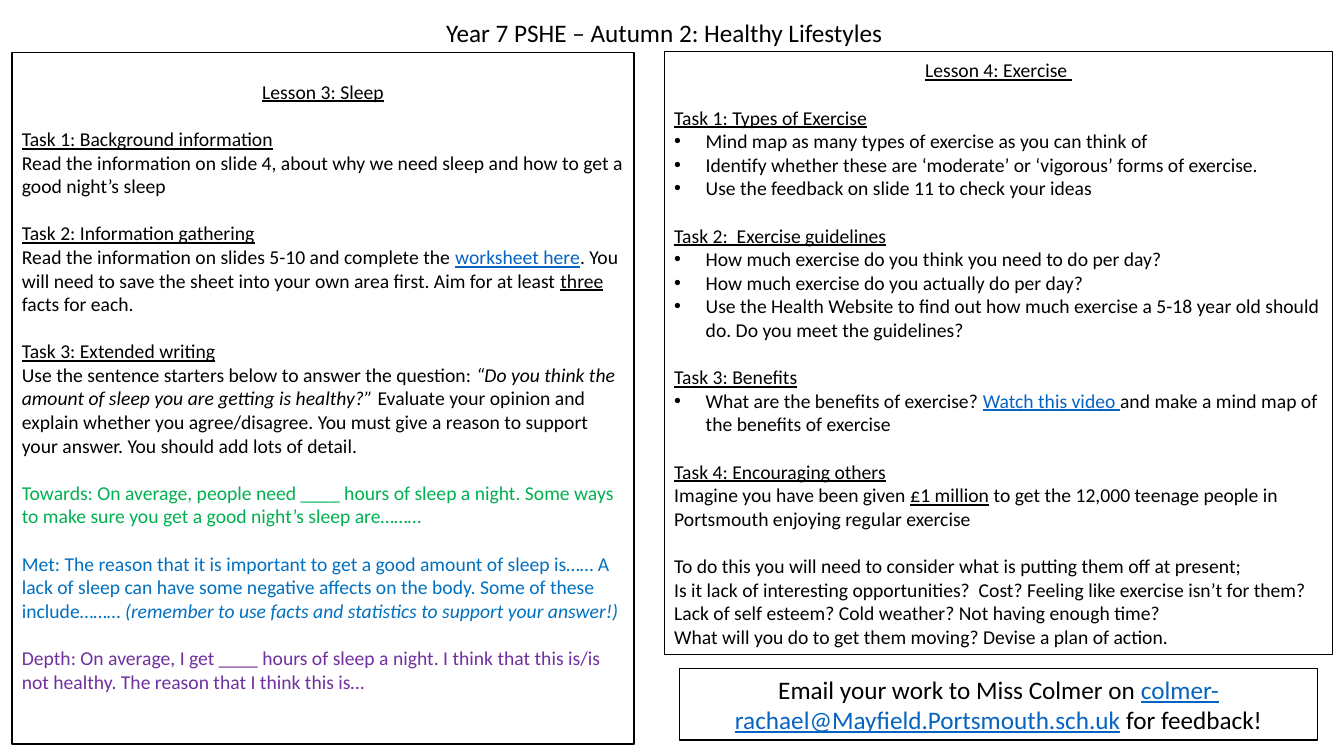
from pptx import Presentation
from pptx.dml.color import RGBColor
from pptx.enum.shapes import MSO_SHAPE
from pptx.enum.text import MSO_ANCHOR, MSO_AUTO_SIZE, PP_ALIGN
from pptx.oxml.ns import qn
from pptx.util import Pt
from lxml import etree

RECTANGLE = MSO_SHAPE.RECTANGLE
TOP, MIDDLE = MSO_ANCHOR.TOP, MSO_ANCHOR.MIDDLE
LEFT, CENTER = PP_ALIGN.LEFT, PP_ALIGN.CENTER
NO_AUTOFIT = MSO_AUTO_SIZE.NONE

# Content: a lesson is a list of blocks, a block a list of (kind, run, ...)
# and a run is plain text or (text, style)
TITLE = "Year 7 PSHE – Autumn 2: Healthy Lifestyles"

SLEEP = [
    [("centered", ("Lesson 3: Sleep", "underlined"))],
    [("plain", ("Task 1: Background information", "underlined")),
     ("plain", "Read the information on slide 4, about why we need sleep and "
               "how to get a good night’s sleep")],
    [("plain", ("Task 2: Information gathering", "underlined")),
     ("plain", "Read the information on slides 5-10 and complete the ",
      ("worksheet here", "link"),
      ". You will need to save the sheet into your own area first. "
      "Aim for at least ", ("three ", "underlined"), "facts for each.")],
    [("plain", ("Task 3: Extended writing", "underlined")),
     ("plain", "Use the sentence starters below to answer the question: ",
      ("“Do you think the amount of sleep you are getting is healthy?” ", "italic"),
      "Evaluate your opinion and explain whether you agree/disagree. You must "
      "give a reason to support your answer. You should add lots of detail.")],
    [("plain", ("Towards: On average, people need ____ hours of sleep a night. "
                "Some ways to make sure you get a good night’s sleep are………",
                "towards"))],
    [("plain", ("Met: The reason that it is important to get a good amount of "
                "sleep is…… A lack of sleep can have some negative affects on "
                "the body. Some of these include……… ", "met"),
      ("(remember to use facts and statistics to support your answer!)",
       "met note"))],
    [("plain", ("Depth: On average, I get ____ hours of sleep a night. I think "
                "that this is/is not healthy. The reason that I think this is…",
                "depth"))],
]

EXERCISE = [
    [("centered", ("Lesson 4: Exercise ", "underlined"))],
    [("plain", ("Task 1: Types of Exercise", "underlined")),
     ("bullet", "Mind map as many types of exercise as you can think of"),
     ("bullet", "Identify whether these are ‘moderate’ or ‘vigorous’ forms of "
                "exercise."),
     ("bullet", "Use the feedback on slide 11 to check your ideas")],
    [("plain", ("Task 2:  Exercise guidelines", "underlined")),
     ("bullet", "How much exercise do you think you need to do per day?"),
     ("bullet", "How much exercise do you actually do per day?"),
     ("bullet", "Use the Health Website to find out how much exercise a 5-18 "
                "year old should do. Do you meet the guidelines?")],
    [("plain", ("Task 3: Benefits", "underlined")),
     ("bullet", "What are the benefits of exercise? ",
      ("Watch this video ", "link"),
      "and make a mind map of the benefits of exercise")],
    [("plain", ("Task 4: Encouraging others", "underlined")),
     ("plain", "Imagine you have been given ", ("£1 million", "underlined"),
      " to get the 12,000 teenage people in Portsmouth enjoying regular exercise")],
    [("plain", "To do this you will need to consider what is putting them off "
               "at present;"),
     ("plain", "Is it lack of interesting opportunities?  Cost? Feeling like "
               "exercise isn’t for them? Lack of self esteem? Cold weather? "
               "Not having enough time?"),
     ("plain", "What will you do to get them moving? Devise a plan of action.")],
]

EMAIL = [
    [("centered", "Email your work to Miss Colmer on ",
      ("colmer-rachael@Mayfield.Portsmouth.sch.uk", "link"), " for feedback!")],
]

# Format: run styles as (colour, font attributes)
BLACK, WHITE = "000000", "FFFFFF"
STYLES = {
    "normal": (BLACK, {}),
    "underlined": (BLACK, {"underline": True}),
    "italic": (BLACK, {"italic": True}),
    "link": ("0563C1", {"underline": True}),
    "towards": ("00B050", {}),
    "met": ("0070C0", {}),
    "met note": ("0070C0", {"italic": True}),
    "depth": ("7030A0", {}),
}
FONT = "Calibri"
BLOCK_GAP = 17
BULLET_INDENT = 22.5
INSET = 3.6

# Boxes: blocks, text size, (left, top, width, height), bottom inset
BOXES = [
    (SLEEP, 14, (8.5, 37.5, 444.5, 494), INSET + BLOCK_GAP),
    (EXERCISE, 14, (474.5, 37, 477.5, 430.5), INSET),
    (EMAIL, 18, (485.5, 477.5, 455.5, 51), INSET),
]


def color(value):
    return RGBColor.from_string(value)


def apply(target, values):
    for name, value in values.items():
        setattr(target, name, value)


def add_run(paragraph, text, size, style="normal"):
    run = paragraph.add_run()
    run.text = text
    hue, extras = STYLES[style]
    apply(run.font, {"name": FONT, "size": Pt(size), **extras})
    run.font.color.rgb = color(hue)


def add_bullet(paragraph):
    properties = paragraph._p.get_or_add_pPr()
    properties.set("marL", str(Pt(BULLET_INDENT)))
    properties.set("indent", str(-Pt(BULLET_INDENT)))
    etree.SubElement(properties, qn("a:buFont")).set("typeface", "Arial")
    etree.SubElement(properties, qn("a:buChar")).set("char", "•")


def fill_text(frame, blocks, size):
    paragraph = None
    for block in blocks:
        for position, (kind, *runs) in enumerate(block):
            first = paragraph is None
            paragraph = frame.paragraphs[0] if first else frame.add_paragraph()
            if kind == "bullet":
                add_bullet(paragraph)
            paragraph.alignment = CENTER if kind == "centered" else LEFT
            if position == 0 and not first:
                paragraph.space_before = Pt(BLOCK_GAP)
            for run in runs:
                text, style = (run, "normal") if isinstance(run, str) else run
                add_run(paragraph, text, size, style)


def add_box(slide, blocks, size, place, bottom_inset):
    box = slide.shapes.add_shape(RECTANGLE, *map(Pt, place))
    box.shadow.inherit = False
    box.fill.solid()
    box.fill.fore_color.rgb = color(WHITE)
    box.line.color.rgb = color(BLACK)
    box.line.width = Pt(1)
    apply(box.text_frame, {"word_wrap": True, "vertical_anchor": MIDDLE,
                           "margin_bottom": Pt(bottom_inset)})
    fill_text(box.text_frame, blocks, size)


def main():
    deck = Presentation()
    apply(deck, {"slide_width": Pt(960), "slide_height": Pt(540)})
    slide = deck.slides.add_slide(deck.slide_layouts.get_by_name("Title Only"))

    # Title
    title = slide.shapes.title
    apply(title, {"left": Pt(176.5), "top": Pt(8.5),
                  "width": Pt(596), "height": Pt(29)})
    apply(title.text_frame, {"auto_size": NO_AUTOFIT, "word_wrap": True,
                             "vertical_anchor": TOP})
    fill_text(title.text_frame, [[("centered", TITLE)]], 18)

    # Lessons and email line
    for box in BOXES:
        add_box(slide, *box)

    deck.save("out.pptx")


if __name__ == "__main__":
    main()
